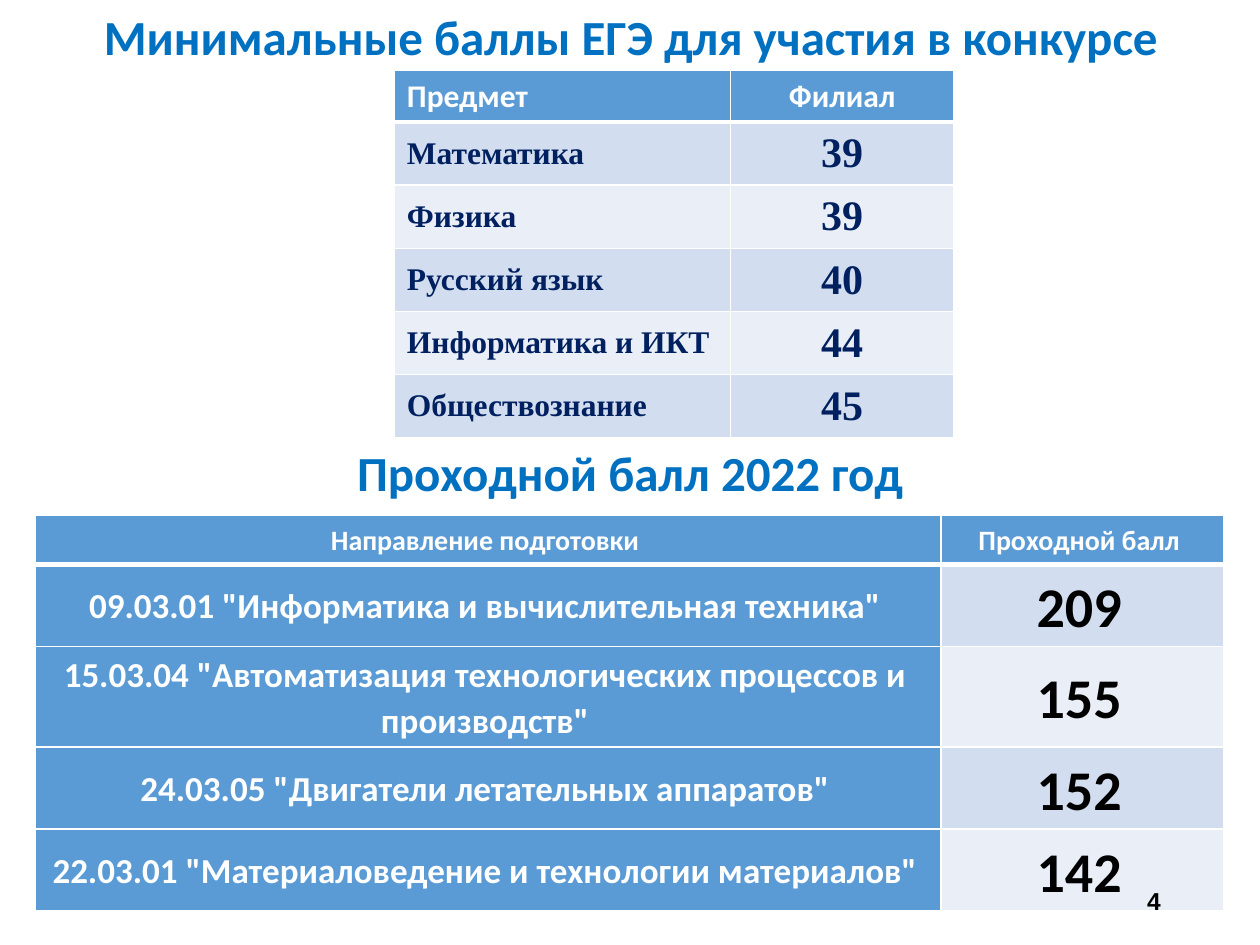
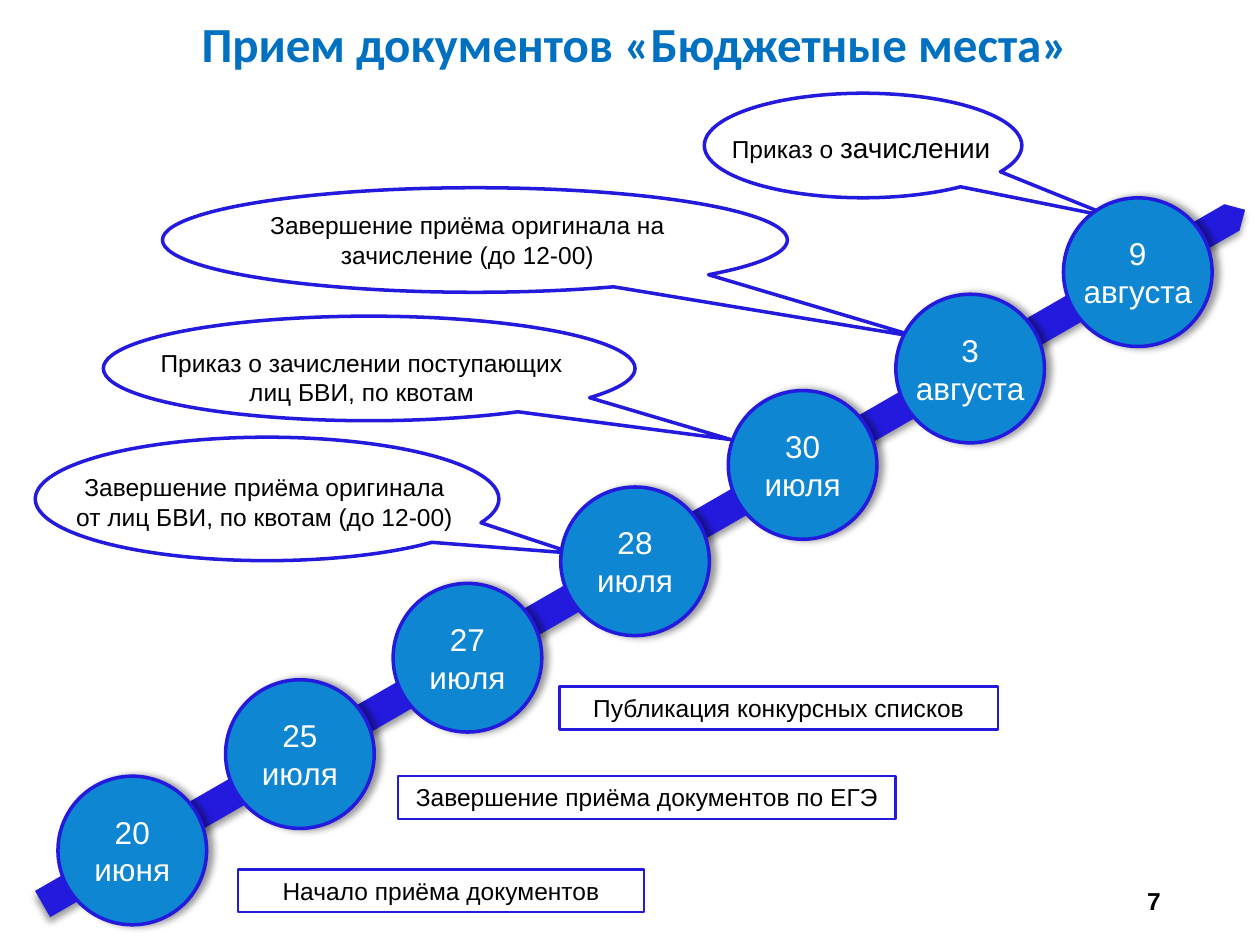
import copy
from dataclasses import dataclass

import lxml.etree
import pptx
import pptx.dml.color
import pptx.enum.shapes
import pptx.enum.text
import pptx.oxml
import pptx.oxml.ns
import pptx.util

Inches = pptx.util.Inches
Pt = pptx.util.Pt
RGB = pptx.dml.color.RGBColor.from_string
SHAPE = pptx.enum.shapes.MSO_SHAPE
ALIGN = pptx.enum.text.PP_ALIGN
ANCHOR = pptx.enum.text.MSO_ANCHOR
NS = pptx.oxml.ns.nsdecls("a")


@dataclass(frozen=True)
class Theme:
    title: str = "0070C0"
    header: str = "5B9BD5"
    bands: tuple = ("D2DEEF", "EAEFF7")
    navy: str = "002060"
    line: str = "231ADD"
    disc: str = "0E86D2"
    white: str = "FFFFFF"
    black: str = "000000"
    heading_font: str = "Calibri"
    body_font: str = "Arial"
    serif_font: str = "Times New Roman"
    title_size: int = 28
    note_size: int = 14
    date_size: int = 18


T = Theme()


def write(tf, text, size=T.note_size, font=T.body_font, color=T.black, bold=False,
          align=ALIGN.CENTER, anchor=ANCHOR.TOP, wrap=True, spacing=None,
          tail="", tail_size=None):
    tf.vertical_anchor = anchor
    if wrap is not None:
        tf.word_wrap = wrap
    lines = text.split("\n")
    for i, line in enumerate(lines):
        p = tf.paragraphs[0] if i == 0 else tf.add_paragraph()
        p.alignment = align
        if spacing:
            p.line_spacing = spacing
        parts = [(line, size)]
        if tail and i == len(lines) - 1:
            parts.append((tail, tail_size))
        for words, points in parts:
            r = p.add_run()
            r.text = words
            r.font.size = Pt(points)
            r.font.name = font
            r.font.bold = bold
            r.font.color.rgb = RGB(color)


def add_text(shapes, box, text, **fmt):
    sp = shapes.add_textbox(*map(Inches, box))
    write(sp.text_frame, text, **fmt)


def add_title(s, box, text, wrap=True):
    add_text(s.shapes, box, text, size=T.title_size, font=T.heading_font,
             color=T.title, bold=True, wrap=wrap)


def add_page_number(s, number):
    add_text(s.shapes, (7.06, 6.95, 2.25, 0.4), str(number), bold=True,
             align=ALIGN.RIGHT, anchor=ANCHOR.MIDDLE)


def add_figure(shapes, kind, box, fill=None, line=None, width=2):
    sp = shapes.add_shape(kind, *map(Inches, box))
    sp.shadow.inherit = False
    if fill:
        sp.fill.solid()
        sp.fill.fore_color.rgb = RGB(fill)
    else:
        sp.fill.background()
    if line:
        sp.line.color.rgb = RGB(line)
        sp.line.width = Pt(width)
    else:
        sp.line.fill.background()
    return sp


def add_shadow(sp, angle):
    effects = sp._element.spPr.find(pptx.oxml.ns.qn("a:effectLst"))
    effects.append(pptx.oxml.parse_xml(
        f'<a:outerShdw {NS} blurRad="{Pt(4)}" dist="{Pt(3)}" dir="{angle * 60000}" '
        f'algn="ctr" rotWithShape="0"><a:srgbClr val="{T.black}">'
        '<a:alpha val="40000"/></a:srgbClr></a:outerShdw>'))


def set_borders(cell, top, bottom):
    tcPr = cell._tc.get_or_add_tcPr()
    for i, (side, width) in enumerate(zip("LRTB", (1, 1, top, bottom))):
        tcPr.insert(i, pptx.oxml.parse_xml(
            f'<a:ln{side} {NS} w="{Pt(width)}"><a:solidFill>'
            f'<a:srgbClr val="{T.white}"/></a:solidFill></a:ln{side}>'))


def add_score_table(s, box, widths, heights, rows, header, label, score,
                    label_fill=None, margins=(0.1, 0.05, 0.1, 0.05)):
    frame = s.shapes.add_table(len(rows), len(widths), *map(Inches, box))
    table = frame.table
    table.first_row = table.horz_banding = False
    for column, width in zip(table.columns, widths):
        column.width = Inches(width)
    for i, (row, height) in enumerate(zip(rows, heights)):
        table.rows[i].height = Inches(height)
        band = T.bands[(i - 1) % 2]
        fills = (T.header, T.header) if i == 0 else (label_fill or band, band)
        for j, (text, fill, body) in enumerate(zip(row, fills, (label, score))):
            cell = table.cell(i, j)
            cell.fill.solid()
            cell.fill.fore_color.rgb = RGB(fill)
            (cell.margin_left, cell.margin_top,
             cell.margin_right, cell.margin_bottom) = map(Inches, margins)
            cell.vertical_anchor = ANCHOR.MIDDLE
            set_borders(cell, 3 if i == 1 else 1, 3 if i == 0 else 1)
            fmt = {**body, **header} if i == 0 else body
            write(cell.text_frame, text, bold=True, anchor=ANCHOR.MIDDLE,
                  wrap=None, **fmt)


def add_callout(s, box, tip, text_box, text, **fmt):
    group = s.shapes.add_group_shape()
    sp = add_figure(group.shapes, SHAPE.OVAL_CALLOUT, box, line=T.line)
    sp.adjustments[0], sp.adjustments[1] = tip
    add_text(group.shapes, text_box, text, **fmt)


def add_timeline(s, box, dates):
    left, top, width, height = box
    size = 1.18
    step_x = (width - size) / (len(dates) - 1)
    step_y = (height - size) / (len(dates) - 1)
    group = s.shapes.add_group_shape()
    arrow = add_figure(group.shapes, SHAPE.PENTAGON,
                       (left - 0.86, top + 2.73, 11.02, 0.24), fill=T.line)
    arrow.rotation = 330
    add_shadow(arrow, 90)
    for i, date in enumerate(dates):
        disc = add_figure(
            group.shapes, SHAPE.OVAL,
            (left + i * step_x, top + height - size - i * step_y, size, size),
            fill=T.disc, line=T.line)
        add_shadow(disc, 0)
        write(disc.text_frame, date, size=T.date_size, color=T.white,
              anchor=ANCHOR.MIDDLE, wrap=False)


def build_scores(prs):
    s = prs.slides.add_slide(prs.slide_layouts[6])
    add_title(s, (0.34, 0, 9.33, 0.57), "Минимальные баллы ЕГЭ для участия в конкурсе")
    add_title(s, (1.13, 3.46, 7.74, 0.57), "Проходной балл 2022 год")
    heading = dict(font=T.heading_font, color=T.white)
    add_score_table(
        s, (0.28, 4.09, 9.43, 3.13), (7.19, 2.24), (0.39, 0.65, 0.8, 0.65, 0.65),
        [("Направление подготовки", "Проходной балл"),
         ('09.03.01 "Информатика и вычислительная техника"', "209"),
         ('15.03.04 "Автоматизация технологических процессов и производств"', "155"),
         ('24.03.05 "Двигатели летательных аппаратов"', "152"),
         ('22.03.01 "Материаловедение и технологии материалов"', "142")],
        header=dict(heading, size=16),
        label=dict(heading, size=20, spacing=1.07),
        score=dict(size=32, font=T.heading_font, spacing=1.07),
        label_fill=T.header, margins=(0.05, 0.04, 0.1, 0.04))
    subject = dict(font=T.serif_font, color=T.navy)
    add_score_table(
        s, (3.13, 0.56, 4.44, 2.91), (2.67, 1.77), (0.41,) + (0.5,) * 5,
        [("Предмет", "Филиал"), ("Математика", "39"), ("Физика", "39"),
         ("Русский язык", "40"), ("Информатика и ИКТ", "44"),
         ("Обществознание", "45")],
        header=dict(heading, size=18),
        label=dict(subject, size=18, align=ALIGN.LEFT),
        score=dict(subject, size=24))
    add_page_number(s, 4)


def build_admission(prs):
    s = prs.slides.add_slide(prs.slide_layouts[6])
    add_title(s, (1.48, 0.06, 7.11, 0.57), "Прием документов «Бюджетные места»", wrap=False)
    for left, top, width, text in (
            (1.89, 6.9, 3.22, "Начало приёма документов"),
            (3.16, 6.16, 3.95, "Завершение приёма документов по ЕГЭ"),
            (4.44, 5.45, 3.48, "Публикация конкурсных списков")):
        sp = add_figure(s.shapes, SHAPE.RECTANGLE, (left, top, width, 0.34),
                        line=T.line, width=1.5)
        write(sp.text_frame, text)
    add_callout(s, (5.59, 0.74, 2.52, 0.83), (0.79, 0.69), (5.57, 0.99, 2.53, 0.37),
                "Приказ о ", tail="зачислении", tail_size=16)
    for box, tip, text_box, text in (
            ((1.29, 1.49, 4.96, 0.83), (0.71, 0.93), (1.52, 1.62, 4.38, 0.57),
             "Завершение приёма оригинала на зачисление (до 12-00)"),
            ((0.82, 2.51, 4.22, 0.83), (0.68, 0.68), (1.01, 2.71, 3.72, 0.57),
             "Приказ о зачислении поступающих лиц БВИ, по квотам"),
            ((0.28, 3.47, 3.68, 0.98), (0.66, 0.44), (0.48, 3.7, 3.24, 0.48),
             "Завершение приёма оригинала от лиц БВИ, по квотам (до 12-00)")):
        add_callout(s, box, tip, text_box, text)
    add_timeline(s, (0.46, 1.57, 9.16, 5.77),
                 ["20\nиюня", "25\nиюля", "27\nиюля", "28\nиюля", "30\nиюля",
                  "3\nавгуста", "9\nавгуста"])
    add_page_number(s, 7)


def main():
    prs = pptx.Presentation()
    prs.slide_width, prs.slide_height = Inches(10), Inches(7.5)
    build_scores(prs)
    build_admission(prs)
    prs.save("out.pptx")


if __name__ == "__main__":
    main()
